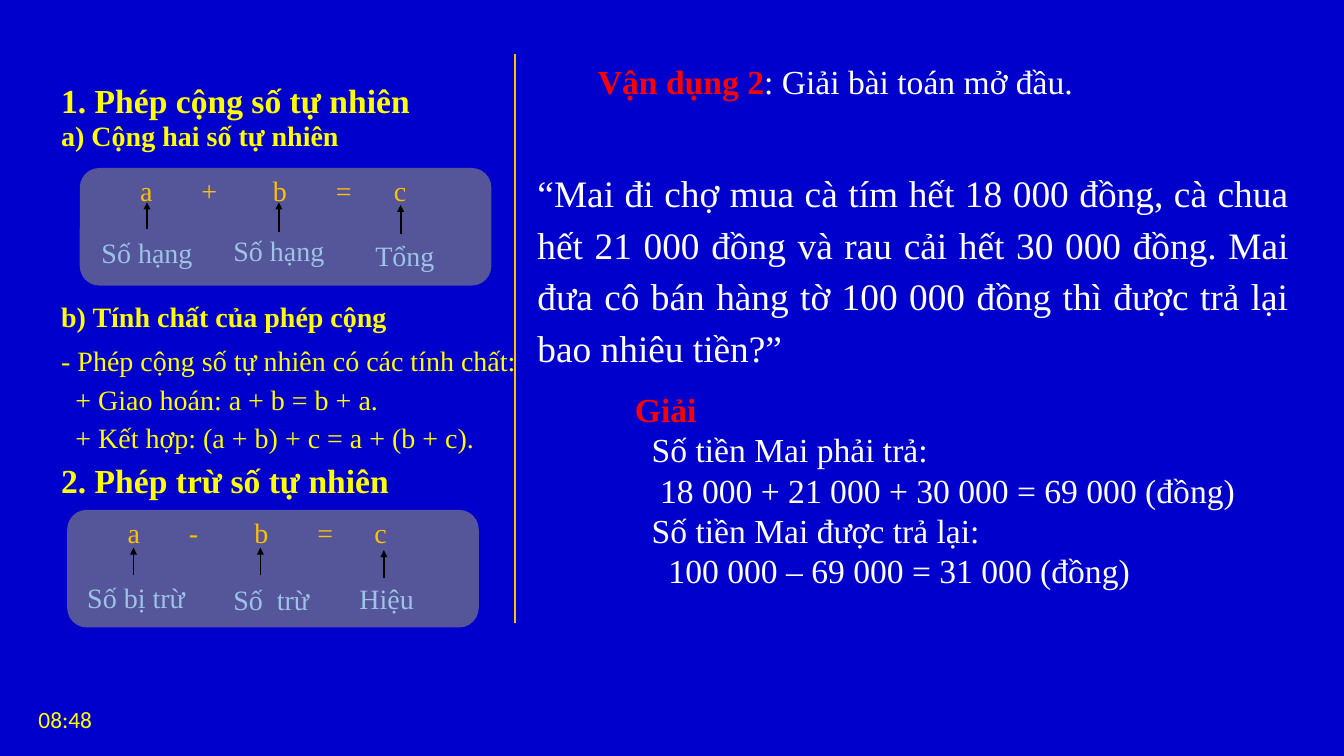
from typing import NamedTuple
from lxml.etree import SubElement as Sub
from pptx import Presentation
from pptx.dml.color import RGBColor
from pptx.enum.shapes import MSO_CONNECTOR as Link, MSO_SHAPE as Shape
from pptx.enum.text import MSO_ANCHOR as Anchor, MSO_AUTO_SIZE as Fit, PP_ALIGN as Align
from pptx.oxml.ns import qn
from pptx.util import Inches, Pt

BLUE = RGBColor(0x00, 0x00, 0xCC)
YELLOW = RGBColor(0xFF, 0xFF, 0x00)
GOLD = RGBColor(0xFF, 0xC0, 0x00)
SKY = RGBColor(0x9D, 0xC3, 0xE6)
RED = RGBColor(0xFF, 0x00, 0x00)
WHITE = RGBColor(0xFF, 0xFF, 0xFF)
BLACK = RGBColor(0x00, 0x00, 0x00)
GRAY = RGBColor(0x80, 0x80, 0x80)
SERIF = "Times New Roman"


class Style(NamedTuple):
    size: float
    color: RGBColor
    bold: bool = False
    face: str = SERIF


class Line(NamedTuple):
    runs: list[tuple[str, Style]]
    indent: float = 0
    wide: bool = False
    tabs: tuple[float, ...] = ()


class Box(NamedTuple):
    left: float
    top: float
    width: float
    height: float
    lines: list[Line]


class Term(NamedTuple):
    text: str
    left: float
    top: float
    width: float
    axis: float
    start: float
    end: float


class Panel(NamedTuple):
    left: float
    top: float
    sums: str
    tabs: tuple[float, ...]
    terms: list[Term]


HEAD = Style(28.8, YELLOW, True)
SUBHEAD = Style(24, YELLOW, True)
BODY = Style(24, YELLOW)
SUM = Style(24, GOLD)
LABEL = Style(24, SKY)
KEY = Style(28.8, RED, True)
WORK = Style(28.8, WHITE)
STORY = Style(32, WHITE)
CLOCK = Style(20, YELLOW, face="Calibri")

PANELS = [
    Panel(0.95, 2, "a\t+\tb\t=\tc", (0.73, 1.58, 2.33, 3.02), [
        Term("Số hạng", 1.11, 2.75, 1.48, 1.75, 2.73, 2.41),
        Term("Số hạng", 2.68, 2.73, 1.48, 3.32, 2.76, 2.41),
        Term("Tổng", 4.37, 2.79, 1.19, 4.77, 2.78, 2.44),
    ]),
    Panel(0.8, 6.07, "a\t-\tb\t=\tc", (0.73, 1.51, 2.26, 2.94), [
        Term("Số bị trừ", 0.94, 6.86, 1.48, 1.59, 6.85, 6.52),
        Term("Số  trừ", 2.68, 6.89, 1.48, 3.1, 6.85, 6.52),
        Term("Hiệu", 4.18, 6.87, 1.48, 4.57, 6.88, 6.55),
    ]),
]

BOXES = [
    Box(0.63, 0.9, 5.83, 0.59, [Line([("1. Phép cộng số tự nhiên", HEAD)])]),
    Box(0.63, 1.36, 5.24, 0.5, [Line([("a) Cộng hai số tự nhiên", SUBHEAD)])]),
    Box(0.63, 3.52, 5.37, 0.5, [Line([("b) Tính chất của phép cộng", SUBHEAD)])]),
    Box(0.63, 3.98, 5.83, 1.49, [
        Line([("- Phép cộng số tự nhiên có các tính chất:", BODY)], wide=True),
        Line([("+ Giao hoán: a + b = b + a.", BODY)], 0.17, True),
        Line([("+ Kết hợp: (a + b) + c = a + (b + c).", BODY)], 0.17, True),
    ]),
    Box(0.63, 5.42, 5.83, 0.59, [Line([("2. Phép trừ số tự nhiên", HEAD)])]),
    Box(7.02, 0.6, 8, 0.66, [
        Line([("Vận dụng 2", KEY), (": Giải bài toán mở đầu.", WORK)], wide=True),
    ]),
    Box(7.46, 4.58, 7.81, 3.01, [
        Line([("Giải", KEY)]),
        Line([("Số tiền Mai phải trả:", WORK)], 0.2),
        Line([("18 000 + 21 000 + 30 000 = 69 000 (đồng)", WORK)], 0.3),
        Line([("Số tiền Mai được trả lại:", WORK)], 0.2),
        Line([("100 000 – 69 000 = 31 000 (đồng)", WORK)], 0.4),
    ]),
    Box(6.3, 1.9, 9.15, 2.58, [
        Line([("“Mai đi chợ mua cà tím hết 18 000 đồng, cà chua hết 21 000 đồng "
               "và rau cải hết 30 000 đồng. Mai đưa cô bán hàng tờ 100 000 đồng "
               "thì được trả lại bao nhiêu tiền?”", STORY)], wide=True),
    ]),
]


def set_font(font, style: Style) -> None:
    font.name = style.face
    font.size = Pt(style.size)
    font.bold = style.bold
    font.color.rgb = style.color


def add_box(slide, box: Box, fit: Fit = Fit.SHAPE_TO_FIT_TEXT,
            anchor: Anchor = Anchor.TOP) -> None:
    shape = slide.shapes.add_textbox(*map(Inches, box[:4]))
    frame = shape.text_frame
    frame.word_wrap = True
    frame.auto_size = fit
    frame.vertical_anchor = anchor
    for i, line in enumerate(box.lines):
        para = frame.paragraphs[0] if i == 0 else frame.add_paragraph()
        props = para._p.get_or_add_pPr()
        if line.indent:
            props.set("marL", str(Inches(line.indent)))
            props.set("indent", "0")
        if line.wide:
            para.alignment = Align.JUSTIFY
            para.line_spacing = 1.15
        if line.tabs:
            stops = Sub(props, qn("a:tabLst"))
            for tab in line.tabs:
                Sub(stops, qn("a:tab"), pos=str(Inches(tab)), algn="l")
        if len(line.runs) == 1:
            set_font(para.font, line.runs[0][1])
        for text, style in line.runs:
            run = para.add_run()
            run.text = text
            if len(line.runs) > 1:
                set_font(run.font, style)


def add_line(slide, start: tuple[float, float], end: tuple[float, float],
             color: RGBColor, width: float, arrow: bool = False) -> None:
    line = slide.shapes.add_connector(Link.STRAIGHT, *map(Inches, start + end))
    line.line.color.rgb = color
    line.line.width = Pt(width)
    if arrow:
        Sub(line.line._get_or_add_ln(), qn("a:tailEnd"), type="triangle")
    Sub(line._element.spPr, qn("a:effectLst"))


def add_panel(slide, panel: Panel) -> None:
    card = slide.shapes.add_shape(
        Shape.ROUNDED_RECTANGLE, *map(Inches, (panel.left, panel.top, 4.9, 1.4)))
    card.shadow.inherit = False
    card.line.fill.background()
    card.fill.solid()
    card.fill.fore_color.rgb = GRAY
    tint = card._element.spPr.find(qn("a:solidFill"))[0]
    Sub(tint, qn("a:alpha"), val="67000")
    add_box(slide, Box(panel.left + 0.62, panel.top + 0.02, 3.93, 0.5,
                       [Line([(panel.sums, SUM)], tabs=panel.tabs)]))
    for term in panel.terms:
        add_box(slide, Box(term.left, term.top, term.width, 0.5,
                           [Line([(term.text, LABEL)])]))
        add_line(slide, (term.axis, term.start), (term.axis, term.end),
                 BLACK, 1.5, True)


def main() -> None:
    deck = Presentation()
    deck.slide_width, deck.slide_height = Inches(16), Inches(9)
    slide = deck.slides.add_slide(deck.slide_layouts[6])
    slide.background.fill.solid()
    slide.background.fill.fore_color.rgb = BLUE
    add_line(slide, (6.13, 0.64), (6.13, 7.42), GOLD, 2)
    for panel in PANELS:
        add_panel(slide, panel)
    for box in BOXES:
        add_box(slide, box)
    clock = Box(0.36, 8.32, 2.05, 0.48, [Line([("08:48", CLOCK)])])
    add_box(slide, clock, Fit.NONE, Anchor.MIDDLE)
    deck.save("out.pptx")


if __name__ == "__main__":
    main()
